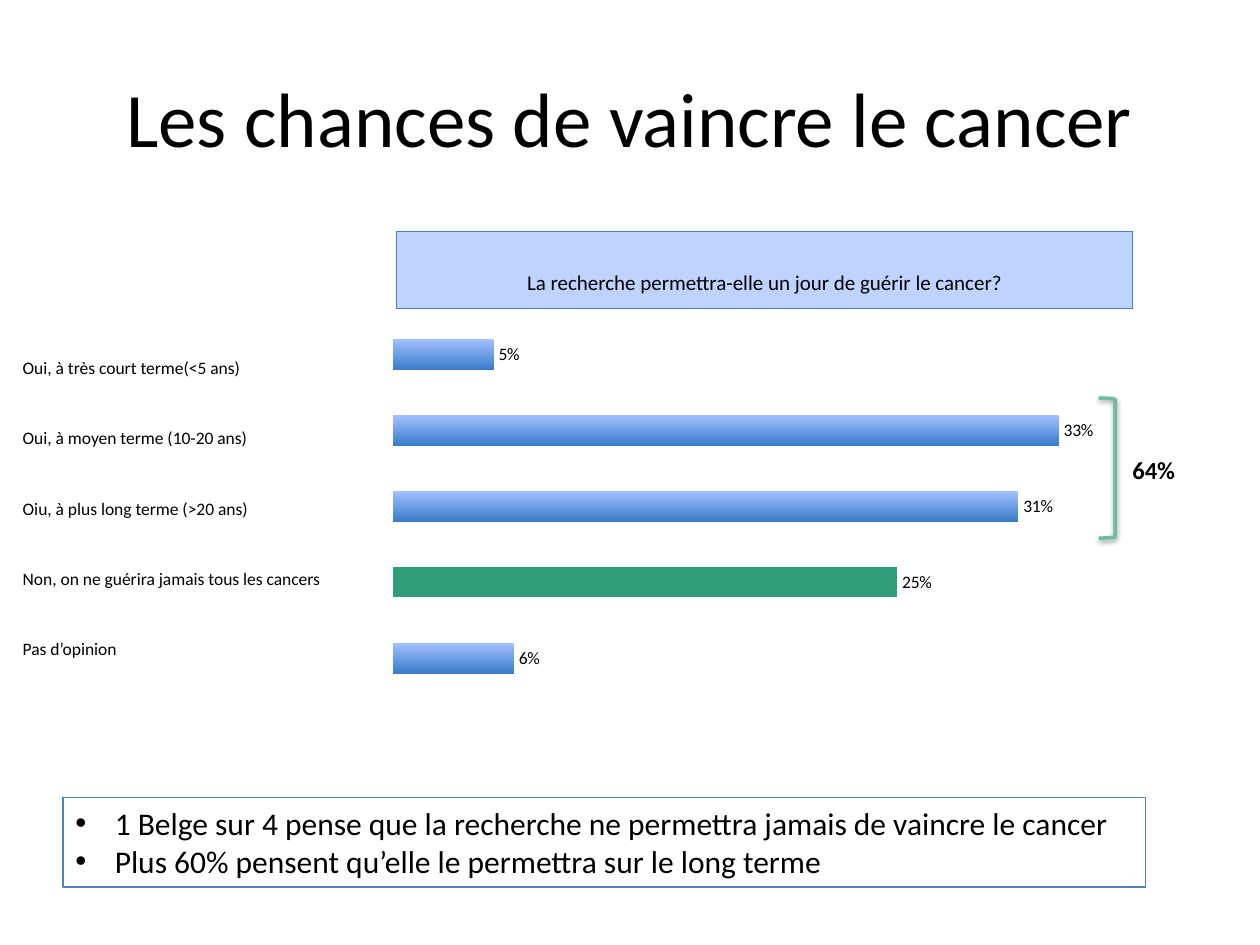
from lxml import etree
from pptx import Presentation
from pptx.chart.data import CategoryChartData
from pptx.dml.color import RGBColor
from pptx.enum import chart as ch, shapes, text
from pptx.oxml import parse_xml
from pptx.oxml.ns import nsdecls, qn
from pptx.util import Pt

FONT = "Calibri"
BLACK, WHITE, BLUE, GREEN = "000000", "FFFFFF", "4F81BD", "2E9C79"
ANSWERS = [
    ("Oui, à très court terme(<5 ans)", 5),
    ("Oui, à moyen terme (10-20 ans)", 33),
    ("Oiu, à plus long terme (>20 ans)", 31),
    ("Non, on ne guérira jamais tous les cancers", 25),
    ("Pas d’opinion", 6),
]
NEVER = 3


def rgb(value):
    return RGBColor.from_string(value)


def box(left, top, width, height):
    return Pt(left), Pt(top), Pt(width), Pt(height)


def style(font, size, bold=False):
    font.name, font.size, font.bold = FONT, Pt(size), bold
    font.color.rgb = rgb(BLACK)


def add_text(s, area, words, size, bold=False, align=None):
    tf = s.shapes.add_textbox(*area).text_frame
    tf.word_wrap = True
    tf.vertical_anchor = text.MSO_ANCHOR.MIDDLE
    p = tf.paragraphs[0]
    p.text, p.alignment = words, align
    style(p.font, size, bold)


def add_column(s, area, lines, size, fill, bottom=0, align=None):
    """Add a one-column table with a row for each line; return its cells."""
    frame = s.shapes.add_table(len(lines), 1, *area)
    frame.table.first_row = frame.table.horz_banding = False
    cells = list(frame.table.iter_cells())
    for cell, line in zip(cells, lines):
        cell.text = line
        cell.vertical_anchor = text.MSO_ANCHOR.BOTTOM
        cell.margin_left = cell.margin_right = cell.margin_top = Pt(0.75)
        cell.margin_bottom = Pt(bottom)
        cell.fill.solid()
        cell.fill.fore_color.rgb = rgb(fill)
        p = cell.text_frame.paragraphs[0]
        p.alignment = align
        style(p.font, size)
    return cells


def add_question(s, area):
    cell, = add_column(s, area, ["La recherche permettra-elle un jour de guérir le cancer?"],
                       12, "BFD3FF", bottom=7.5, align=text.PP_ALIGN.CENTER)
    for i, side in enumerate("LRTB"):
        cell._tc.get_or_add_tcPr().insert(i, parse_xml(
            f'<a:ln{side} {nsdecls("a")} w="{Pt(0.75)}"><a:solidFill>'
            f'<a:srgbClr val="4B7EBC"/></a:solidFill></a:ln{side}>'))


def set_plot_area(chart, **fractions):
    """Fix the inner plot area at x, y, w, h as fractions of the chart."""
    plot_area = chart._chartSpace.chart.plotArea
    for old in plot_area.findall(qn("c:layout")):
        plot_area.remove(old)
    layout = etree.Element(qn("c:layout"))
    manual = etree.SubElement(layout, qn("c:manualLayout"))
    settings = {"layoutTarget": "inner", "xMode": "edge", "yMode": "edge", **fractions}
    for name, value in settings.items():
        etree.SubElement(manual, qn(f"c:{name}")).set("val", str(value))
    plot_area.insert(0, layout)


def add_bars(s, area):
    data = CategoryChartData()
    data.categories = [str(i + 1) for i in range(len(ANSWERS))]
    data.add_series("Series 1", [value for _, value in ANSWERS])
    chart = s.shapes.add_chart(ch.XL_CHART_TYPE.BAR_CLUSTERED, *area, data).chart
    chart.has_legend = chart.has_title = False
    style(chart.font, 10)
    chart.category_axis.reverse_order = True
    chart.value_axis.minimum_scale, chart.value_axis.maximum_scale = 0, 35
    chart.value_axis.has_major_gridlines = False
    chart.category_axis.visible = chart.value_axis.visible = False
    set_plot_area(chart, x=0.02, y=0.02, w=0.96, h=0.96)

    plot = chart.plots[0]
    plot.gap_width, plot.vary_by_categories = 150, False
    plot.has_data_labels = True
    labels = plot.data_labels
    labels.show_value = True
    labels.number_format, labels.number_format_is_linked = '0"%"', False
    labels.position = ch.XL_LABEL_POSITION.OUTSIDE_END
    style(labels.font, 10)

    series = plot.series[0]
    fill = series.format.fill
    fill.gradient()
    fill.gradient_angle = 270
    for stop, color in zip(fill.gradient_stops, ("A3C1FF", "3A7CCB")):
        stop.color.rgb = rgb(color)
    never = series.points[NEVER].format.fill
    never.solid()
    never.fore_color.rgb = rgb(GREEN)


def add_bracket(s, area):
    sp = s.shapes.add_shape(shapes.MSO_SHAPE.RIGHT_BRACKET, *area)
    sp.fill.background()
    sp.line.color.rgb, sp.line.width = rgb("6CBD9C"), Pt(2)
    sp.shadow.inherit = False
    sp._element.spPr.find(qn("a:effectLst")).append(parse_xml(
        f'<a:outerShdw {nsdecls("a")} blurRad="{Pt(3.1)}" dist="{Pt(1.6)}" dir="5400000">'
        '<a:srgbClr val="000000"><a:alpha val="38000"/></a:srgbClr></a:outerShdw>'))


def add_conclusions(s, area, lines):
    sp = s.shapes.add_shape(shapes.MSO_SHAPE.RECTANGLE, *area)
    sp.shadow.inherit = False
    sp.fill.background()
    sp.line.color.rgb, sp.line.width = rgb(BLUE), Pt(0.75)
    tf = sp.text_frame
    tf.word_wrap = True
    tf.vertical_anchor = text.MSO_ANCHOR.TOP
    tf.text = "\n".join(lines)
    for p in tf.paragraphs:
        p.alignment = text.PP_ALIGN.LEFT
        style(p.font, 18)
        pPr = p._p.get_or_add_pPr()
        pPr.set("marL", str(Pt(22.5)))
        pPr.set("indent", str(-Pt(22.5)))
        bullet = (f'<a:buFont {nsdecls("a")} typeface="Arial"/>',
                  f'<a:buChar {nsdecls("a")} char="•"/>')
        for i, xml in enumerate(bullet):
            pPr.insert(i, parse_xml(xml))


def main():
    prs = Presentation()
    prs.slide_width, prs.slide_height = Pt(720), Pt(540)
    s = prs.slides.add_slide(prs.slide_layouts[6])
    add_text(s, box(36, 21.6, 648, 90), "Les chances de vaincre le cancer", 44,
             align=text.PP_ALIGN.CENTER)
    add_column(s, box(12.24, 176.4, 214.5, 201), [label for label, _ in ANSWERS], 10, WHITE)
    add_question(s, box(226.8, 132.5, 420.5, 44))
    add_bars(s, box(216, 176.4, 420.5, 226))
    add_bracket(s, box(627.8, 227.5, 9.4, 80))
    add_text(s, box(640, 256.3, 44, 24.5), "64%", 14, bold=True)
    add_conclusions(s, box(36, 455.8, 618.5, 51), [
        "1 Belge sur 4 pense que la recherche ne permettra jamais de vaincre le cancer",
        "Plus 60% pensent qu’elle le permettra sur le long terme",
    ])
    prs.save("out.pptx")


if __name__ == "__main__":
    main()
